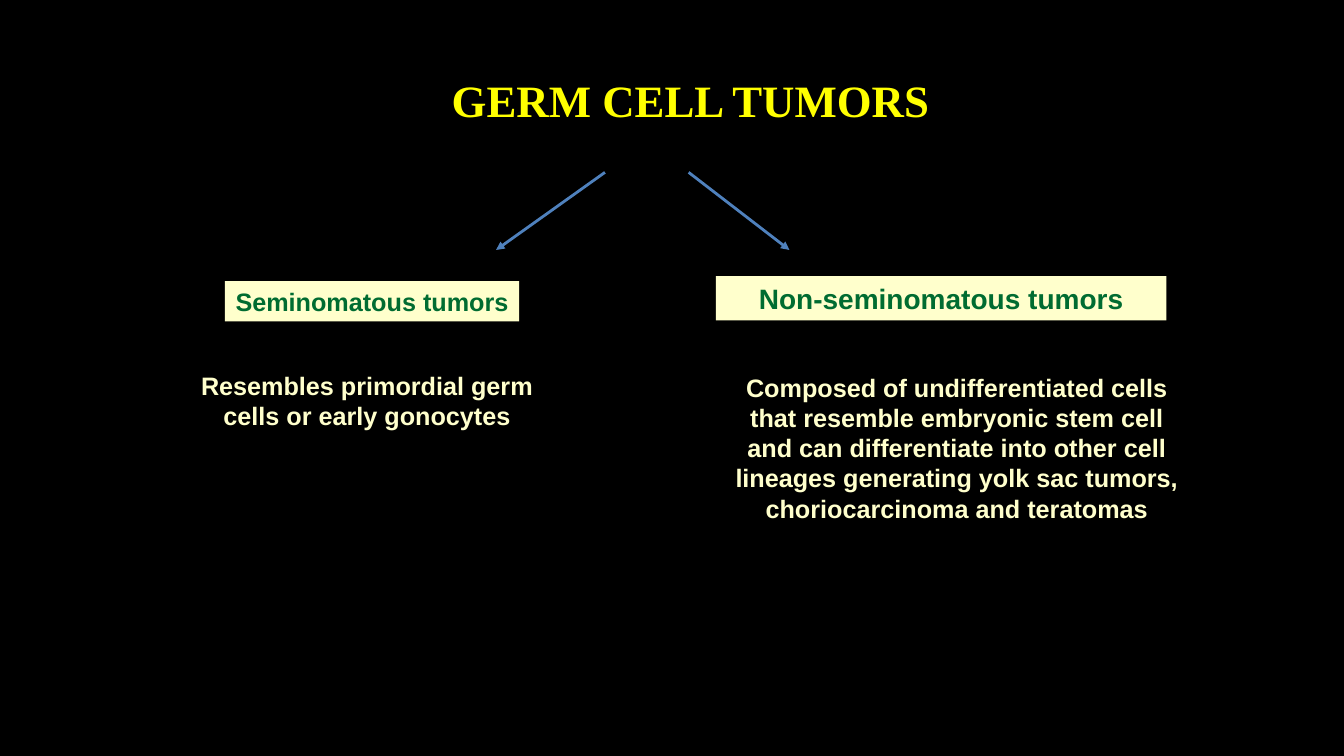
from dataclasses import dataclass

from lxml.etree import SubElement
from pptx import Presentation
from pptx.dml.color import RGBColor
from pptx.enum.shapes import MSO_CONNECTOR, MSO_SHAPE
from pptx.enum.text import MSO_ANCHOR, PP_ALIGN
from pptx.oxml.ns import qn
from pptx.util import Inches, Pt


@dataclass(frozen=True)
class Theme:
    background: str = "000000"
    title: str = "FFFF00"
    cream: str = "FFFFCC"
    green: str = "006C31"
    arrow: str = "4F81BD"
    title_font: str = "Times New Roman"
    body_font: str = "Arial"
    title_size: int = 32
    large_size: int = 20
    body_size: int = 18
    arrow_width: int = 2


THEME = Theme()

BRANCHES = [
    {
        "arrow": (6, 1.71, 4.92, 2.48),
        "label": "Seminomatous tumors",
        "label_box": (2.23, 2.79, 2.92, 0.4),
        "label_size": THEME.body_size,
        "detail": "Resembles primordial germ cells or early gonocytes",
        "detail_box": (1.82, 3.62, 3.64, 0.71),
    },
    {
        "arrow": (6.83, 1.71, 7.83, 2.48),
        "label": "Non-seminomatous tumors",
        "label_box": (7.1, 2.74, 4.47, 0.44),
        "label_size": THEME.large_size,
        "detail": "Composed of undifferentiated cells that resemble embryonic "
                  "stem cell and can differentiate into other cell lineages "
                  "generating yolk sac tumors, choriocarcinoma and teratomas",
        "detail_box": (7.19, 3.64, 4.6, 1.62),
    },
]


def set_values(target, values):
    for name, value in values.items():
        setattr(target, name, value)


def write_text(shape, text, color, size, font=THEME.body_font,
               anchor=MSO_ANCHOR.TOP, wrap=True, spacing=1.0):
    frame = shape.text_frame
    set_values(frame, {"word_wrap": wrap, "vertical_anchor": anchor})
    para = frame.paragraphs[0]
    set_values(para, {"alignment": PP_ALIGN.CENTER, "line_spacing": spacing})
    span = para.add_run()
    span.text = text
    set_values(span.font, {"name": font, "size": Pt(size), "bold": True})
    span.font.color.rgb = RGBColor.from_string(color)


def add_title(page, box, text):
    shape = page.shapes.add_textbox(*map(Inches, box))
    write_text(shape, text, THEME.title, THEME.title_size, THEME.title_font,
               MSO_ANCHOR.MIDDLE, spacing=0.9)


def add_label(page, box, text, size):
    shape = page.shapes.add_shape(MSO_SHAPE.RECTANGLE, *map(Inches, box))
    shape.shadow.inherit = False
    shape.fill.solid()
    shape.fill.fore_color.rgb = RGBColor.from_string(THEME.cream)
    shape.line.fill.background()
    write_text(shape, text, THEME.green, size, wrap=False)


def add_detail(page, box, text):
    shape = page.shapes.add_textbox(*map(Inches, box))
    write_text(shape, text, THEME.cream, THEME.body_size)


def add_arrow(page, ends):
    arrow = page.shapes.add_connector(MSO_CONNECTOR.STRAIGHT, *map(Inches, ends))
    arrow.line.color.rgb = RGBColor.from_string(THEME.arrow)
    arrow.line.width = Pt(THEME.arrow_width)
    properties = arrow.element.spPr
    SubElement(properties.find(qn("a:ln")), qn("a:tailEnd"), type="triangle")
    SubElement(properties, qn("a:effectLst"))


def add_branch(page, branch):
    add_label(page, branch["label_box"], branch["label"], branch["label_size"])
    add_detail(page, branch["detail_box"], branch["detail"])
    add_arrow(page, branch["arrow"])


def main():
    deck = Presentation()
    set_values(deck, {"slide_width": Inches(13.33), "slide_height": Inches(7.5)})
    page = deck.slides.add_slide(deck.slide_layouts[6])
    fill = page.background.fill
    fill.solid()
    fill.fore_color.rgb = RGBColor.from_string(THEME.background)
    add_title(page, (2.35, 0.4, 9, 1.25), "GERM CELL TUMORS")
    for branch in BRANCHES:
        add_branch(page, branch)
    deck.save("out.pptx")


if __name__ == "__main__":
    main()
